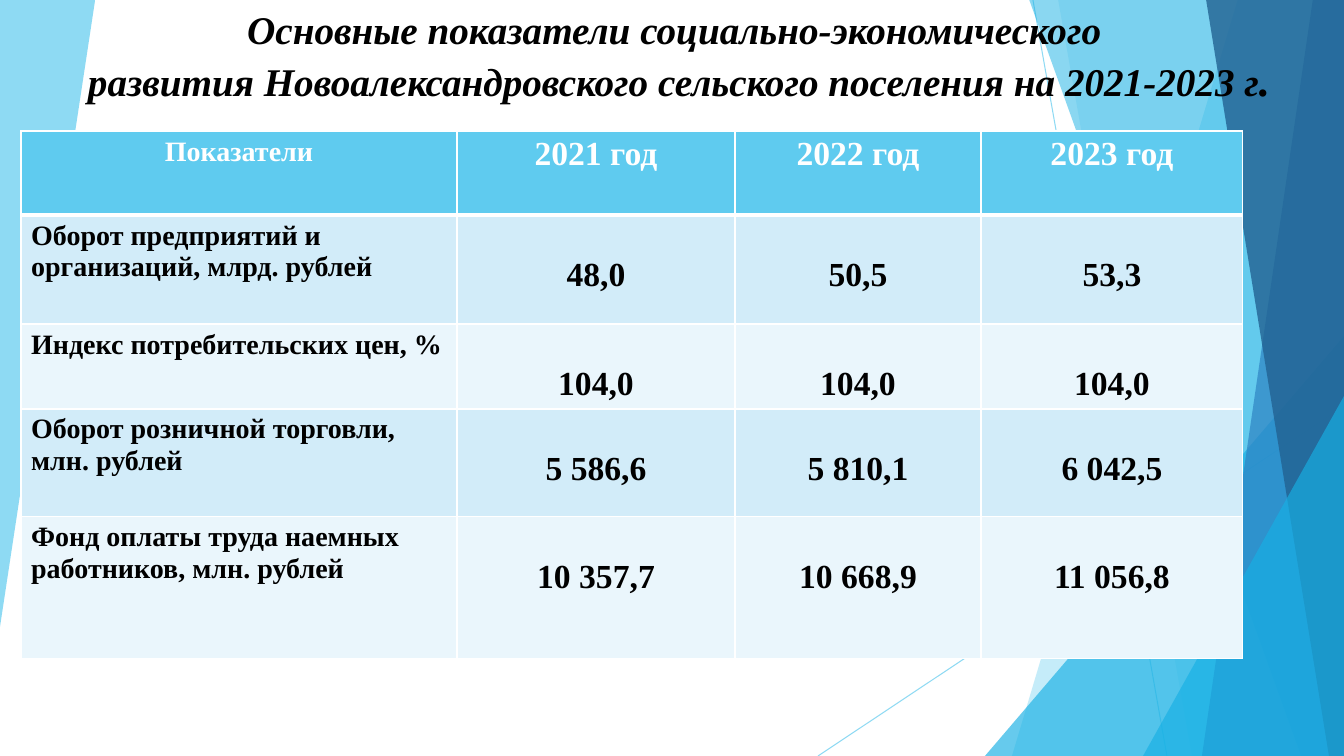
from lxml.etree import SubElement
from pptx import Presentation
from pptx.dml.color import RGBColor
from pptx.enum.shapes import MSO_CONNECTOR, MSO_SHAPE
from pptx.enum.text import PP_ALIGN
from pptx.oxml.ns import qn
from pptx.util import Emu, Pt

TITLE = [
    [("Основные показатели социально-экономического ", 28)],
    [("развития Новоалександровского сельского поселения на 2021-2023 г", 28), (".", 32)],
]
INDICATORS = [
    ("Показатели", "2021 год", "2022 год", "2023 год"),
    ("Оборот предприятий и организаций, млрд. рублей", "48,0", "50,5", "53,3"),
    ("Индекс потребительских цен, %", "104,0", "104,0", "104,0"),
    ("Оборот розничной торговли, млн. рублей", "5 586,6", "5 810,1", "6 042,5"),
    ("Фонд оплаты труда наемных работников, млн. рублей", "10 357,7", "10 668,9", "11 056,8"),
]
COLORS = {
    "sky": "5FCBEF", "azure": "17B0E4", "blue": "2E83C3", "navy": "226292",
    "odd": "D2ECF9", "even": "EAF6FC", "white": "FFFFFF", "black": "000000",
}
WIDTH, HEIGHT = 1344, 756
SCALE = 914400 / 100.8
COLUMNS = [436, 278, 246, 262]
ROWS = [84, 109, 85, 108, 142]
TABLE_LEFT, TABLE_TOP = 21, 131
VALUE_DROP = 42
TITLE_BOX = (60, 0, 1238, 112)
FONT = {"name": "Times New Roman", "bold": True}

RAYS = [((1033, 0), (1167, 756)), ((1344, 406), (818, 756))]
LEFT_FACET = ([(0, -1), (95, -1), (95, 1), (0, 627)], "sky", 70)
RIGHT_FACETS = [
    ("band", 1238, 1012, "sky", 36),
    ("band", 1058, 1192, "sky", 20),
    ("corner", 985, 336, "azure", 66),
    ("band", 1029, 1301, "azure", 50),
    ("band", 1313, 1202, "blue", 70),
    ("band", 1206, 1329, "navy", 80),
    ("corner", 1143, 396, "azure", 66),
]


def px(length):
    return Emu(round(length * SCALE))


def rgb(name):
    return RGBColor.from_string(COLORS[name])


def set_opacity(element, percent):
    color = next(element.iter(qn("a:srgbClr")))
    SubElement(color, qn("a:alpha"), val=str(percent * 1000))


def paint(facet, color, percent):
    facet.shadow.inherit = False
    facet.fill.solid()
    facet.fill.fore_color.rgb = rgb(color)
    facet.line.fill.background()
    set_opacity(facet.fill._xPr, percent)


def add_polygon(shapes, points, color, percent):
    outline = shapes.build_freeform(*points[0], scale=SCALE)
    outline.add_line_segments(points[1:], close=True)
    paint(outline.convert_to_shape(), color, percent)


def add_ray(shapes, start, end):
    ray = shapes.add_connector(MSO_CONNECTOR.STRAIGHT, *map(px, start + end))
    ray.line.width = Pt(0.75)
    ray.line.color.rgb = rgb("sky")
    properties = ray._element.spPr
    set_opacity(properties, 70)
    SubElement(properties, qn("a:effectLst"))


def add_facets(shapes):
    add_polygon(shapes, *LEFT_FACET)
    for start, end in RAYS:
        add_ray(shapes, start, end)
    for kind, first, second, color, percent in RIGHT_FACETS:
        if kind == "band":
            points = [(first, -1), (WIDTH, -1), (WIDTH, HEIGHT), (second, HEIGHT)]
            add_polygon(shapes, points, color, percent)
        else:
            box = (first, second, WIDTH - first, HEIGHT - second)
            corner = shapes.add_shape(MSO_SHAPE.ISOSCELES_TRIANGLE, *map(px, box))
            corner.adjustments[0] = 1
            paint(corner, color, percent)


def write(paragraph, text, size, color, **extra):
    run = paragraph.add_run()
    run.text = text
    for key, value in {**FONT, "size": Pt(size), **extra}.items():
        setattr(run.font, key, value)
    run.font.color.rgb = rgb(color)


def add_borders(cell, row):
    properties = cell._tc.get_or_add_tcPr()
    widths = {"L": 1, "R": 1, "T": 3 if row == 1 else 1, "B": 3 if row == 0 else 1}
    for side, width in widths.items():
        border = SubElement(properties, qn(f"a:ln{side}"), w=str(Pt(width)))
        fill = SubElement(border, qn("a:solidFill"))
        SubElement(fill, qn("a:srgbClr"), val=COLORS["white"])


def add_indicators(shapes):
    box = (TABLE_LEFT, TABLE_TOP, sum(COLUMNS), sum(ROWS))
    table = shapes.add_table(len(ROWS), len(COLUMNS), *map(px, box)).table
    for column, width in zip(table.columns, COLUMNS):
        column.width = px(width)
    for row, height in zip(table.rows, ROWS):
        row.height = px(height)
    for r, texts in enumerate(INDICATORS):
        for c, text in enumerate(texts):
            cell = table.cell(r, c)
            add_borders(cell, r)
            cell.fill.solid()
            cell.fill.fore_color.rgb = rgb("sky" if r == 0 else "odd" if r % 2 else "even")
            if r and c:
                cell.margin_top = px(VALUE_DROP)
                cell.margin_bottom = 0
            paragraph = cell.text_frame.paragraphs[0]
            paragraph.alignment = PP_ALIGN.LEFT if r and not c else PP_ALIGN.CENTER
            write(paragraph, text, 24 if c else 20, "black" if r else "white")


def add_title(shapes):
    frame = shapes.add_textbox(*map(px, TITLE_BOX)).text_frame
    frame.word_wrap = True
    for index, line in enumerate(TITLE):
        paragraph = frame.add_paragraph() if index else frame.paragraphs[0]
        paragraph.alignment = PP_ALIGN.CENTER
        for text, size in line:
            write(paragraph, text, size, "black", italic=True)


def main():
    deck = Presentation()
    deck.slide_width, deck.slide_height = px(WIDTH), px(HEIGHT)
    shapes = deck.slides.add_slide(deck.slide_layouts[6]).shapes
    add_facets(shapes)
    add_indicators(shapes)
    add_title(shapes)
    deck.save("out.pptx")


if __name__ == "__main__":
    main()
